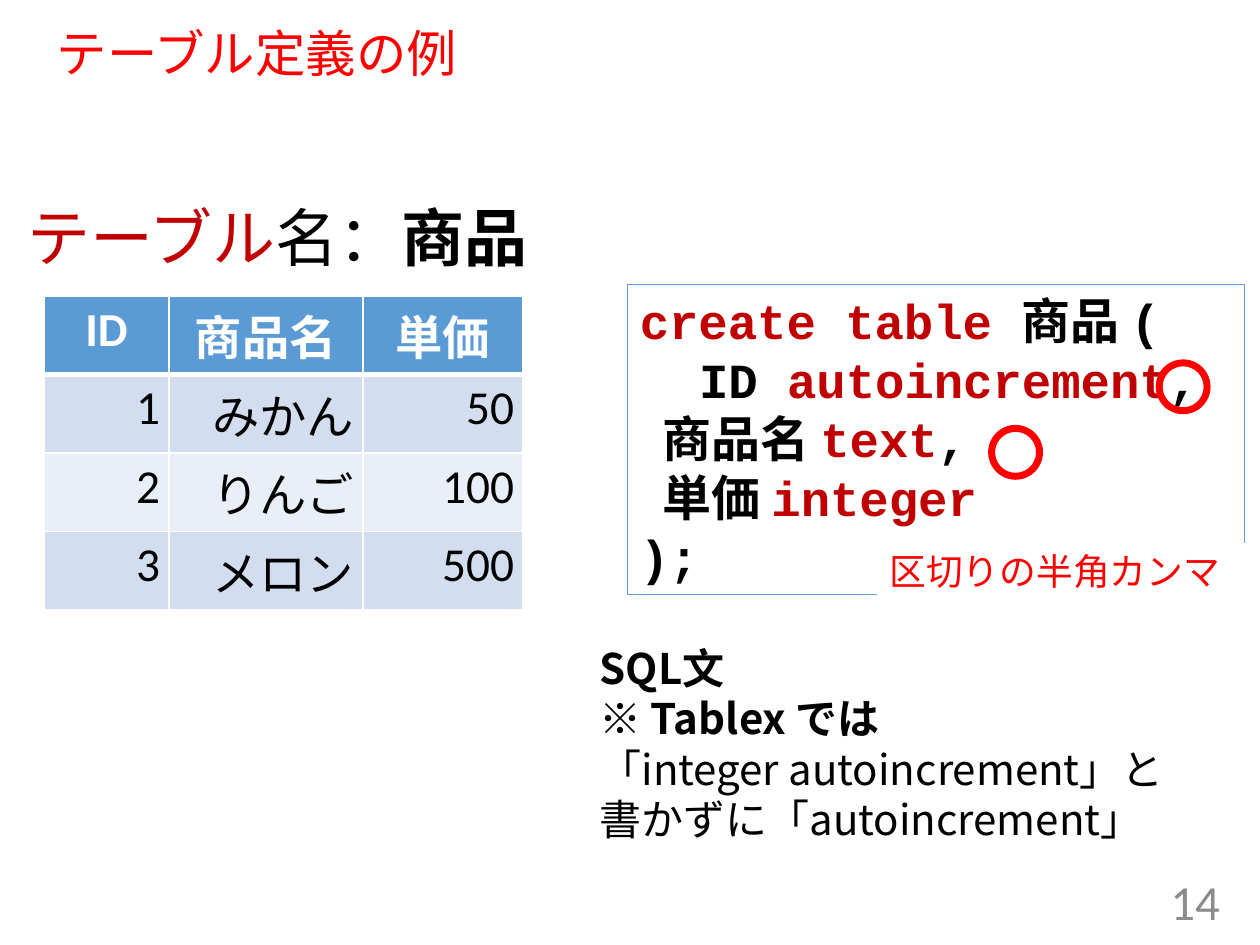
from pptx import Presentation
from pptx.dml.color import RGBColor
from pptx.enum import shapes, text
from pptx.oxml import ns, xmlchemy
from pptx.util import Inches, Pt

RED = RGBColor(0xFF, 0x00, 0x00)
DARK_RED = RGBColor(0xC0, 0x00, 0x00)
BLACK = RGBColor(0x00, 0x00, 0x00)
WHITE = RGBColor(0xFF, 0xFF, 0xFF)
GRAY = RGBColor(0x8C, 0x8C, 0x8C)
BLUE = RGBColor(0x5B, 0x9B, 0xD5)
BAND_DARK = RGBColor(0xD2, 0xDE, 0xEF)
BAND_LIGHT = RGBColor(0xEA, 0xEF, 0xF7)
GOTHIC = "Noto Sans CJK JP"
LEFT, CENTER, RIGHT = text.PP_ALIGN.LEFT, text.PP_ALIGN.CENTER, text.PP_ALIGN.RIGHT


def add_element(parent, tag, **attributes):
    element = xmlchemy.OxmlElement(tag)
    for name, value in attributes.items():
        element.set(name, str(value))
    parent.append(element)
    return element


def box_of(left, top, width, height):
    return Inches(left), Inches(top), Inches(width), Inches(height)


def place(shape, box):
    shape.left, shape.top, shape.width, shape.height = box


def add_run(paragraph, wording, color=BLACK, **formats):
    run = paragraph.add_run()
    run.text = wording
    run.font.color.rgb = color
    for name, value in formats.items():
        setattr(run.font, name, value)
    add_element(run.font._element, "a:ea", typeface=GOTHIC)


def set_frame(frame, anchor=text.MSO_ANCHOR.TOP):
    settings = {"word_wrap": True, "auto_size": text.MSO_AUTO_SIZE.NONE,
                "vertical_anchor": anchor}
    for name, value in settings.items():
        setattr(frame, name, value)


def add_lines(frame, lines, **formats):
    """Each line is a list of (wording, color, bold) runs."""
    for index, runs in enumerate(lines):
        paragraph = frame.add_paragraph() if index else frame.paragraphs[0]
        paragraph.alignment = LEFT
        for wording, color, bold in runs:
            add_run(paragraph, wording, color, bold=bold, **formats)


def add_title(slide, box):
    title = slide.shapes.title
    place(title, box)
    set_frame(title.text_frame, text.MSO_ANCHOR.MIDDLE)
    paragraph = title.text_frame.paragraphs[0]
    paragraph.alignment, paragraph.line_spacing = LEFT, 0.9
    add_run(paragraph, "テーブル定義の例", RED, size=Pt(28.8), name="Calibri")


def add_table_name(slide, box):
    body = slide.placeholders[1]
    place(body, box)
    set_frame(body.text_frame)
    add_lines(body.text_frame,
              [[("テーブル", DARK_RED, False), ("名：", BLACK, False), ("商品", BLACK, True)]],
              size=Pt(36), name=GOTHIC)
    paragraph = body.text_frame.paragraphs[0]
    paragraph.line_spacing, paragraph.space_before = 0.9, Pt(10)
    properties = paragraph._p.get_or_add_pPr()
    properties.set("marL", "0")
    properties.set("indent", "0")
    add_element(properties, "a:buNone")


def set_borders(cell, bottom_width):
    properties = cell._tc.get_or_add_tcPr()
    widths = {"a:lnL": 1, "a:lnR": 1, "a:lnT": 1, "a:lnB": bottom_width}
    for index, (tag, width) in enumerate(widths.items()):
        line = add_element(properties, tag, w=Pt(width))
        add_element(add_element(line, "a:solidFill"), "a:srgbClr", val=WHITE)
        properties.remove(line)
        properties.insert(index, line)  # borders precede the fill


def add_product_table(slide, box):
    rows = [("ID", "商品名", "単価"), ("1", "みかん", "50"),
            ("2", "りんご", "100"), ("3", "メロン", "500")]
    table = slide.shapes.add_table(len(rows), 3, *box).table
    for column, width in zip(table.columns, (0.99, 1.54, 1.27)):
        column.width = Inches(width)
    for row_index, row in enumerate(rows):
        header = row_index == 0
        table.rows[row_index].height = Inches(0.53)
        for column_index, wording in enumerate(row):
            cell = table.cell(row_index, column_index)
            cell.margin_left = cell.margin_right = Inches(0.07)
            cell.margin_top = cell.margin_bottom = Inches(0.04)
            cell.fill.solid()
            cell.fill.fore_color.rgb = (
                BLUE if header else BAND_DARK if row_index % 2 else BAND_LIGHT)
            set_borders(cell, 3 if header or row_index == 1 and False else 1)
            if row_index == 1:
                cell._tc.tcPr.find(ns.qn("a:lnT")).set("w", str(Pt(3)))
            paragraph = cell.text_frame.paragraphs[0]
            paragraph.alignment = CENTER if header else RIGHT
            add_run(paragraph, wording, WHITE if header else BLACK,
                    size=Pt(27), name="Calibri", bold=header)


def add_plain_shape(slide, kind, box, fill=None, line=None, line_width=0):
    shape = slide.shapes.add_shape(kind, *box)
    shape.shadow.inherit = False
    for part, color in ((shape.fill, fill), (shape.line.fill, line)):
        if color is None:
            part.background()
        else:
            part.solid()
            part.fore_color.rgb = color
    if line is not None:
        shape.line.width = Pt(line_width)
    return shape


def add_code(slide, box):
    frame = add_plain_shape(slide, shapes.MSO_SHAPE.RECTANGLE, box,
                            line=BLUE, line_width=0.75).text_frame
    set_frame(frame)
    lines = [[("create table ", DARK_RED, True), ("商品 (", BLACK, True)],
             [("ID ", BLACK, True), ("autoincrement", DARK_RED, True), (",", BLACK, True)],
             [("商品名 ", BLACK, True), ("text", DARK_RED, True), (",", BLACK, True)],
             [("単価 ", BLACK, True), ("integer", DARK_RED, True)],
             [(");", BLACK, True)]]
    add_lines(frame, lines, size=Pt(28), name="Courier New")
    for paragraph, indent in zip(frame.paragraphs, (0, 0.47, 0.18, 0.18, 0)):
        paragraph._p.get_or_add_pPr().set("marL", str(Inches(indent)))


def add_notes_on_sql(slide, box):
    frame = slide.shapes.add_textbox(*box).text_frame
    set_frame(frame)
    lines = [[("SQL文", BLACK, True)],
             [("※ ", BLACK, False), ("Tablex では", BLACK, True)],
             [("「integer autoincrement」と", BLACK, False)],
             [("書かずに「autoincrement」", BLACK, False)]]
    add_lines(frame, lines, size=Pt(24), name=GOTHIC)


def add_comma_marks(slide, label_box, circle_boxes):
    label = add_plain_shape(slide, shapes.MSO_SHAPE.RECTANGLE, label_box, fill=WHITE)
    set_frame(label.text_frame)
    add_lines(label.text_frame, [[("区切りの半角カンマ", RED, False)]],
              size=Pt(21), name="Calibri")
    for box in circle_boxes:
        add_plain_shape(slide, shapes.MSO_SHAPE.OVAL, box, line=RED, line_width=4)


def add_page_number(slide, box):
    frame = slide.shapes.add_textbox(*box).text_frame
    set_frame(frame, text.MSO_ANCHOR.MIDDLE)
    frame.paragraphs[0].alignment = RIGHT
    add_run(frame.paragraphs[0], "14", GRAY, size=Pt(28), name="Calibri")


def main():
    presentation = Presentation()
    presentation.slide_width, presentation.slide_height = Inches(10), Inches(7.5)
    slide = presentation.slides.add_slide(presentation.slide_layouts[1])

    # Headings and page number
    add_title(slide, box_of(0.35, 0.19, 9.25, 0.51))
    add_page_number(slide, box_of(7.53, 6.95, 2.25, 0.4))
    add_table_name(slide, box_of(0.12, 1.59, 4.76, 0.76))

    # Table on the left, its definition on the right
    add_product_table(slide, box_of(0.35, 2.35, 3.8, 2.12))
    add_code(slide, box_of(4.98, 2.26, 4.9, 2.46))
    add_notes_on_sql(slide, box_of(4.66, 5.05, 5.1, 1.72))

    # Separating commas
    add_comma_marks(slide, box_of(6.96, 4.31, 3.04, 0.45),
                    [box_of(7.87, 3.4, 0.38, 0.38), box_of(9.2, 2.88, 0.38, 0.38)])
    presentation.save("out.pptx")


if __name__ == "__main__":
    main()
